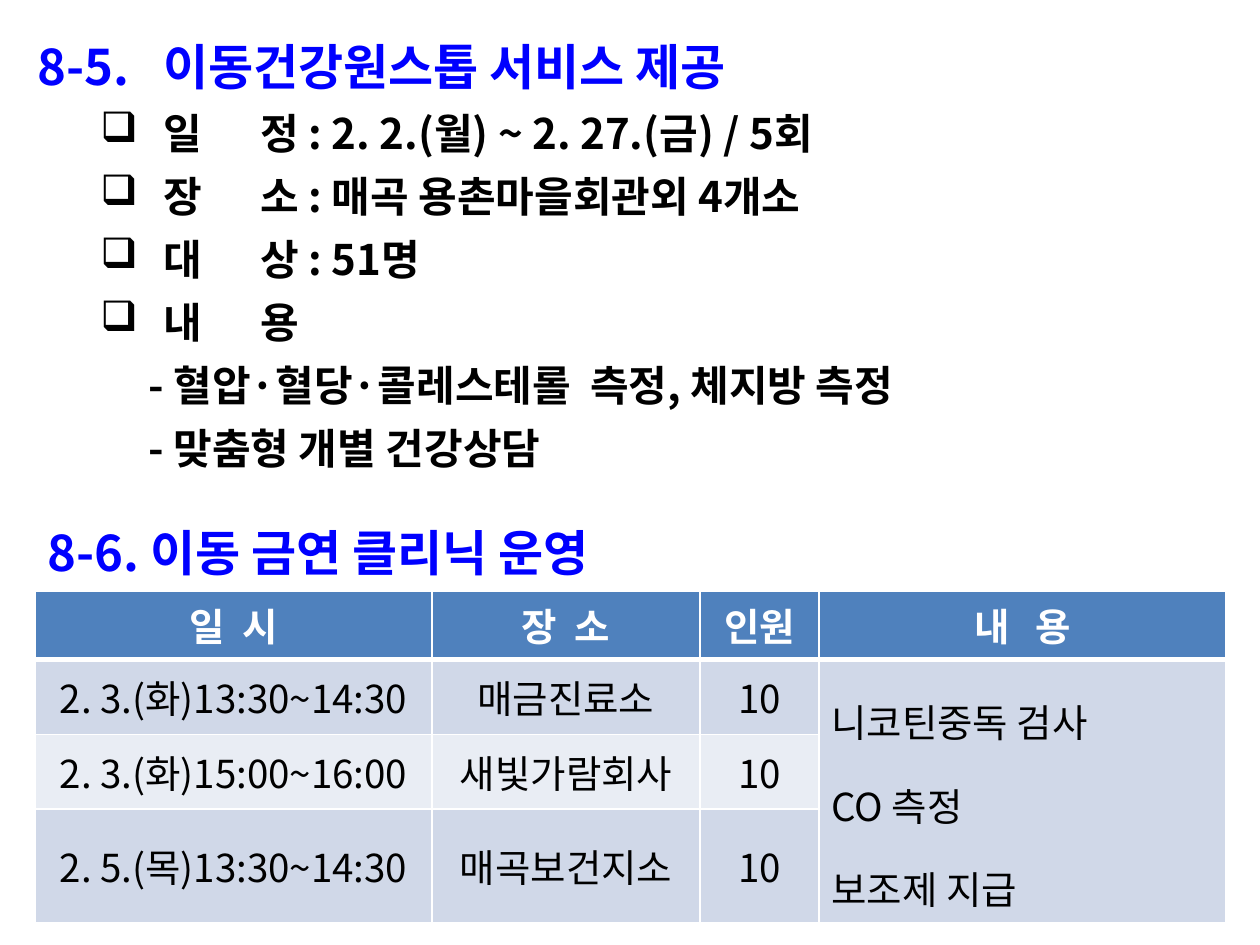
from lxml import etree
from pptx import Presentation
from pptx.dml.color import RGBColor
from pptx.enum.text import MSO_ANCHOR, MSO_AUTO_SIZE, PP_ALIGN
from pptx.oxml import parse_xml
from pptx.oxml.ns import nsdecls, qn
from pptx.util import Emu, Pt

LEFT, CENTER = PP_ALIGN.LEFT, PP_ALIGN.CENTER
TOP, MIDDLE = MSO_ANCHOR.TOP, MSO_ANCHOR.MIDDLE
NO_AUTOFIT = MSO_AUTO_SIZE.NONE

FONT = "Noto Sans CJK KR"
BLUE = RGBColor(0x00, 0x00, 0xFF)
BLACK = RGBColor(0x00, 0x00, 0x00)
WHITE = RGBColor(0xFF, 0xFF, 0xFF)
HEADER_FILL = RGBColor(0x4F, 0x81, 0xBD)
DARK_BAND = RGBColor(0xD0, 0xD8, 0xE8)
LIGHT_BAND = RGBColor(0xE9, 0xED, 0xF4)
LINE_HEIGHT = Pt(36)


def px(length):
    return Emu(round(length * 914400 / 126))


def format_paragraph(paragraph, size, color, bold, align, spacing=None, tab=None):
    paragraph.alignment = align
    paragraph.line_spacing = spacing
    font = paragraph.font
    font.size, font.bold, font.name = Pt(size), bold, FONT
    font.color.rgb = color
    defaults = paragraph._p.pPr.find(qn("a:defRPr"))
    etree.SubElement(defaults, qn("a:ea")).set("typeface", FONT)
    if tab:
        defaults.addprevious(parse_xml(
            f'<a:tabLst {nsdecls("a")}><a:tab pos="{px(tab)}" algn="l"/></a:tabLst>'))


presentation = Presentation()
presentation.slide_width, presentation.slide_height = px(1260), px(945)
slide = presentation.slides.add_slide(presentation.slide_layouts[5])

title = slide.shapes.title
details = slide.shapes.add_textbox(px(25), px(89), px(1201), px(390))
clinic_heading = slide.shapes.add_textbox(px(35), px(512), px(1201), px(76))
title.left, title.top, title.width, title.height = px(25), px(26), px(1201), px(76)
for shape in (title, details, clinic_heading):
    text_frame = shape.text_frame
    text_frame.word_wrap = True
    text_frame.auto_size = NO_AUTOFIT
    text_frame.vertical_anchor = TOP

for shape, text, tab in (
    (title, "8-5.\t이동건강원스톱 서비스 제공", 126),
    (clinic_heading, "8-6. 이동 금연 클리닉 운영", None),
):
    shape.text_frame.text = text
    format_paragraph(shape.text_frame.paragraphs[0], 28, BLUE, True, LEFT, LINE_HEIGHT, tab)

DETAILS = [
    "일\t정 : 2. 2.(월) ~ 2. 27.(금) / 5회",
    "장\t소 : 매곡 용촌마을회관외 4개소",
    "대\t상 : 51명",
    "내\t용",
    "- 혈압·혈당·콜레스테롤  측정, 체지방 측정",
    "- 맞춤형 개별 건강상담",
]
details.text_frame.text = "\n".join(DETAILS)
for paragraph in details.text_frame.paragraphs:
    is_item = not paragraph.text.startswith("-")
    format_paragraph(paragraph, 24, BLACK, True, LEFT, LINE_HEIGHT, 223 if is_item else None)
    properties = paragraph._p.pPr
    properties.set("marL", str(px(126 if is_item else 111)))
    properties.set("indent", str(px(-63 if is_item else 0)))
    if is_item:
        properties.find(qn("a:tabLst")).addprevious(
            parse_xml(f'<a:buChar {nsdecls("a")} char="❑"/>'))

ROWS = [
    ["일  시", "장  소", "인원", "내   용"],
    ["2. 3.(화)13:30~14:30", "매금진료소", "10", "니코틴중독 검사\nCO 측정\n보조제 지급"],
    ["2. 3.(화)15:00~16:00", "새빛가람회사", "10", ""],
    ["2. 5.(목)13:30~14:30", "매곡보건지소", "10", ""],
]
COLUMN_WIDTHS = [397, 268, 119, 407]
ROW_HEIGHTS = [63, 75, 75, 74]
ROW_FILLS = [HEADER_FILL, DARK_BAND, LIGHT_BAND, DARK_BAND]

table = slide.shapes.add_table(
    len(ROWS), len(COLUMN_WIDTHS), px(35), px(591),
    px(sum(COLUMN_WIDTHS)), px(sum(ROW_HEIGHTS))).table
for column, width in zip(table.columns, COLUMN_WIDTHS):
    column.width = px(width)
for row, height in zip(table.rows, ROW_HEIGHTS):
    row.height = px(height)
table.cell(1, 3).merge(table.cell(3, 3))

for row_index, texts in enumerate(ROWS):
    is_header = row_index == 0
    for column_index, text in enumerate(texts):
        cell = table.cell(row_index, column_index)
        cell.fill.solid()
        cell.fill.fore_color.rgb = DARK_BAND if cell.is_spanned else ROW_FILLS[row_index]
        cell.vertical_anchor = TOP if is_header else MIDDLE
        for position, side in enumerate("LRTB"):
            thick = (is_header and side == "B") or (row_index == 1 and side == "T")
            cell._tc.tcPr.insert(position, parse_xml(
                f'<a:ln{side} {nsdecls("a")} w="{Pt(3 if thick else 1)}"><a:solidFill>'
                f'<a:srgbClr val="{WHITE}"/></a:solidFill></a:ln{side}>'))
        if cell.is_spanned:
            continue
        cell.text = text
        for paragraph in cell.text_frame.paragraphs:
            format_paragraph(
                paragraph, 22, WHITE if is_header else BLACK, is_header,
                LEFT if cell.is_merge_origin else CENTER,
                1.5 if cell.is_merge_origin else None)

presentation.save("out.pptx")
